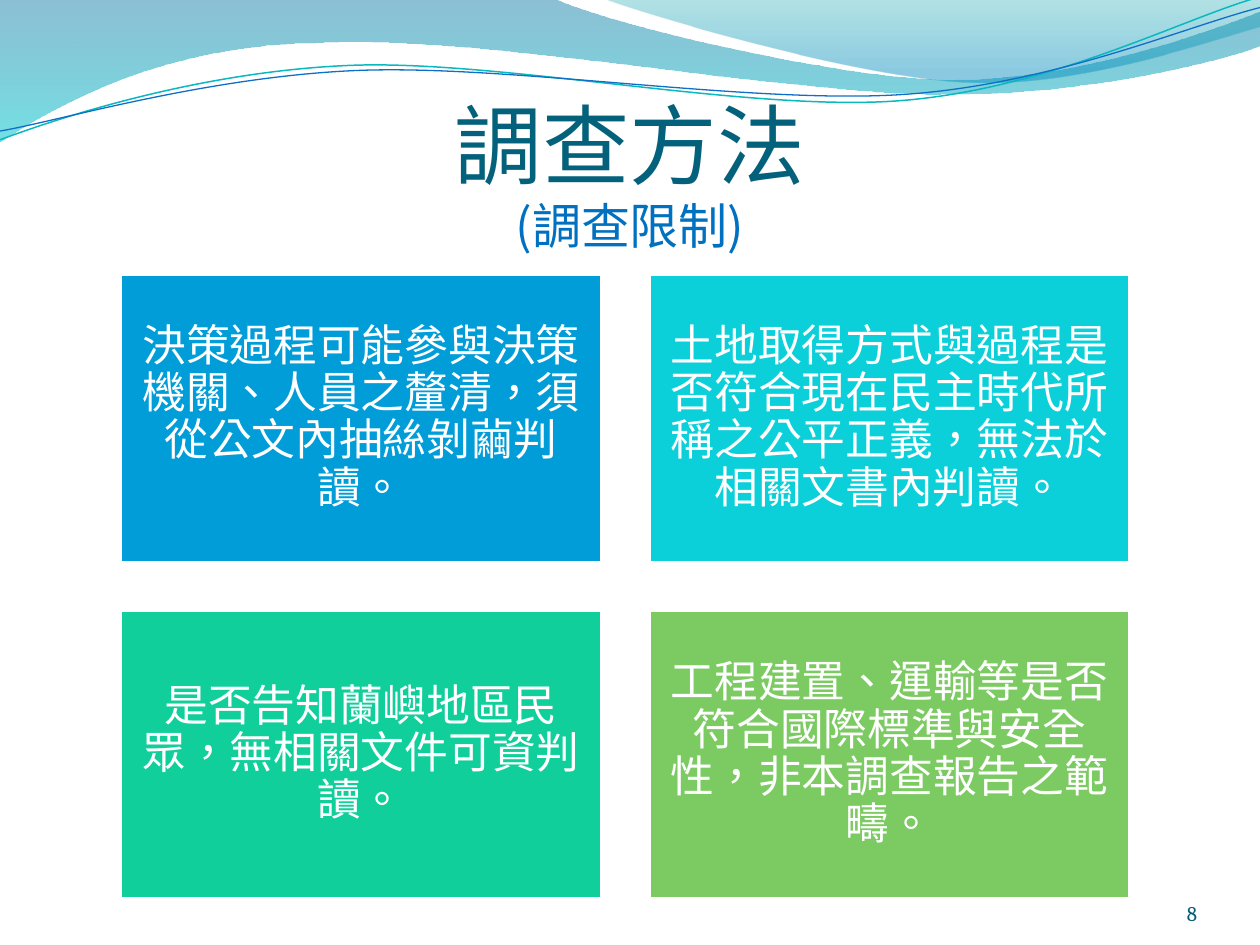
from math import cos, radians, sin

from lxml.etree import SubElement
from pptx import Presentation
from pptx.dml.color import RGBColor
from pptx.enum.lang import MSO_LANGUAGE_ID
from pptx.enum.shapes import MSO_SHAPE
from pptx.enum.text import MSO_ANCHOR, MSO_AUTO_SIZE, PP_ALIGN
from pptx.oxml.ns import qn
from pptx.util import Pt

COLORS = {
    "white": "FFFFFF", "title": "04617B", "subtitle": "0070C0", "number": "045D75",
    "blue": "009DD9", "cyan": "0BD0D9", "green": "10CF9B", "lime": "7CCA62",
    "wave_blue": "0074A1", "wave_cyan": "00C6CF",
    "crest_teal": "00A1A9", "crest_blue": "008BBF",
    "line_teal": "0AB8BF", "line_blue": "0F6FC6",
}
CJK, SERIF = "Noto Sans CJK SC", "Cambria"
TILT = 357.3

# Each path is a start point, then line ends (2 numbers) or Bezier curves (6 numbers).
WAVE = [(0, -0.7), (316.8, -0.7),
        (342.7, 12.2, 478.1, 45.4, 545.8, 45.4), (614.2, 45.4, 689.8, 18.7, 720, 6.5),
        (720.7, 25.9),
        (707.8, 31.7, 626.4, 54.7, 537.1, 54), (447.8, 54, 275, 20.2, 185, 24.5),
        (92.9, 25.2, 33.1, 59.8, -0.7, 81.4), (0, -0.7)]
CREST = [(344.9, -0.7), (366.5, 7.9, 491, 44.6, 553.7, 46.8),
         (616.3, 49.7, 691.9, 23, 720, 15.1), (720, 0), (344.9, -0.7)]
TEAL_LINE = [(0, 79.9), (34.6, 67, 113.8, 41, 199.4, 37.4),
             (284.4, 33.8, 427, 64.1, 513.4, 57.6), (599.8, 51.1, 675.4, 10.8, 718.6, -1.4)]
BLUE_LINE = [(0, 74.9), (33.8, 69.1, 118.1, 43.9, 203.8, 40.3),
             (290.2, 36.7, 429.8, 59.8, 516.2, 54), (601.9, 48.2, 677.5, 15.1, 720, 4.3)]

LIMITS = [
    ("blue", "決策過程可能參與決策機關、人員之釐清，須從公文內抽絲剝繭判讀。"),
    ("cyan", "土地取得方式與過程是否符合現在民主時代所稱之公平正義，無法於相關文書內判讀。"),
    ("green", "是否告知蘭嶼地區民眾，無相關文件可資判讀。"),
    ("lime", "工程建置、運輸等是否符合國際標準與安全性，非本調查報告之範疇。"),
]
LEFT, TOP, WIDTH, HEIGHT = 68.9, 156.5, 274.7, 164.9
STEP_X, STEP_Y = 301.9, 192.2


def rgb(name):
    return RGBColor.from_string(COLORS[name])


class Deck:
    def __init__(self):
        self.prs = Presentation()
        self.prs.slide_width, self.prs.slide_height = Pt(720), Pt(540)
        self.s = self.prs.slides.add_slide(self.prs.slide_layouts[5])

    def run(self, p, text, size, color, font=CJK):
        r = p.add_run()
        r.text = text
        r.font.size = Pt(size)
        r.font.color.rgb = rgb(color)
        r.font.name = font
        r.font.language_id = MSO_LANGUAGE_ID.TRADITIONAL_CHINESE
        SubElement(r.font._element, qn("a:ea"), typeface=font)

    def frame(self, sp, insets, anchor, align):
        """Set up a text frame and return its first paragraph."""
        tf = sp.text_frame
        tf.word_wrap = True
        tf.auto_size = MSO_AUTO_SIZE.NONE
        tf.vertical_anchor = anchor
        tf.margin_left, tf.margin_top, tf.margin_right, tf.margin_bottom = map(Pt, insets)
        p = tf.paragraphs[0]
        p.alignment = align
        p._p.get_or_add_pPr().set("hangingPunct", "0")
        return p

    def outline(self, path, box, rotation=0):
        """Draw a path, given as it shows on the slide, in a box turned by rotation."""
        x, y, w, h = box
        angle = radians(-rotation)

        def local(px, py):
            dx, dy = px - x - w / 2, py - y - h / 2
            return (Pt(dx * cos(angle) - dy * sin(angle) + w / 2),
                    Pt(dx * sin(angle) + dy * cos(angle) + h / 2))

        builder = self.s.shapes.build_freeform(*local(*path[0]))
        builder.add_line_segments([local(*seg[-2:]) for seg in path[1:]],
                                  close=path[0] == path[-1])
        sp = builder.convert_to_shape()
        sp.left, sp.top, sp.width, sp.height = map(Pt, box)
        sp.rotation = rotation
        sp.shadow.inherit = False
        geometry = next(sp._element.iter(qn("a:path")))
        geometry.set("w", str(Pt(w)))
        geometry.set("h", str(Pt(h)))
        for step, seg in zip(geometry, path):
            if len(seg) == 6:
                step_tag = SubElement(geometry, qn("a:cubicBezTo"))
                geometry.replace(step, step_tag)
            else:
                step_tag = step
                step.clear()
            for i in range(0, len(seg), 2):
                px, py = local(*seg[i:i + 2])
                SubElement(step_tag, qn("a:pt"), x=str(px), y=str(py))
        return sp

    def wave(self, path, box, stops):
        """Draw a closed wave with (position, colour, opacity) stops from top to bottom."""
        sp = self.outline(path, box)
        sp.line.fill.background()
        sp.fill.gradient()
        sp.fill.gradient_angle = 270
        for stop, (position, color, opacity) in zip(sp.fill.gradient_stops, stops):
            stop.position = position
            stop.color.rgb = rgb(color)
        for clr, stop in zip(sp._element.spPr.iter(qn("a:srgbClr")), stops):
            SubElement(clr, qn("a:alpha"), val=str(stop[2] * 1000))

    def curve(self, path, box, color, width):
        sp = self.outline(path, box, TILT)
        sp.fill.background()
        sp.line.color.rgb = rgb(color)
        sp.line.width = Pt(width)

    def title(self, text, subtitle):
        sp = self.s.shapes.title
        sp.left, sp.top, sp.width, sp.height = Pt(36), Pt(55.4), Pt(648), Pt(90)
        p = self.frame(sp, (0, 3.6, 0, 0), MSO_ANCHOR.BOTTOM, PP_ALIGN.CENTER)
        self.run(p, text, 50, "title")
        p.add_line_break()
        self.run(p, subtitle, 28, "subtitle")

    def card(self, x, y, color, text):
        sp = self.s.shapes.add_shape(MSO_SHAPE.RECTANGLE, Pt(x), Pt(y), Pt(WIDTH), Pt(HEIGHT))
        sp.shadow.inherit = False
        sp.fill.solid()
        sp.fill.fore_color.rgb = rgb(color)
        sp.line.color.rgb = rgb("white")
        sp.line.width = Pt(2)
        p = self.frame(sp, (7.2,) * 4, MSO_ANCHOR.MIDDLE, PP_ALIGN.CENTER)
        p.line_spacing = 0.9
        self.run(p, text, 25, "white")

    def page_number(self, text):
        sp = self.s.shapes.add_textbox(Pt(624.2), Pt(500.4), Pt(59.8), Pt(28.8))
        p = self.frame(sp, (0,) * 4, MSO_ANCHOR.BOTTOM, PP_ALIGN.RIGHT)
        self.run(p, text, 12, "number", SERIF)


def main():
    deck = Deck()
    deck.wave(WAVE, (-0.7, -0.7, 721.4, 82.1), [(0, "wave_blue", 45), (1, "wave_cyan", 55)])
    deck.wave(CREST, (344.9, -0.7, 375.1, 50.4),
              [(0, "crest_teal", 30), (0.8, "crest_blue", 45)])
    deck.curve(TEAL_LINE, (-1.4, 15.8, 721.4, 51.1), "line_teal", 0.85)
    deck.curve(BLUE_LINE, (-1.4, 21.6, 722.2, 41.8), "line_blue", 0.75)
    deck.title("調查方法", "(調查限制)")
    for i, (color, text) in enumerate(LIMITS):
        row, col = divmod(i, 2)
        deck.card(LEFT + col * STEP_X, TOP + row * STEP_Y, color, text)
    deck.page_number("8")
    deck.prs.save("out.pptx")


if __name__ == "__main__":
    main()
